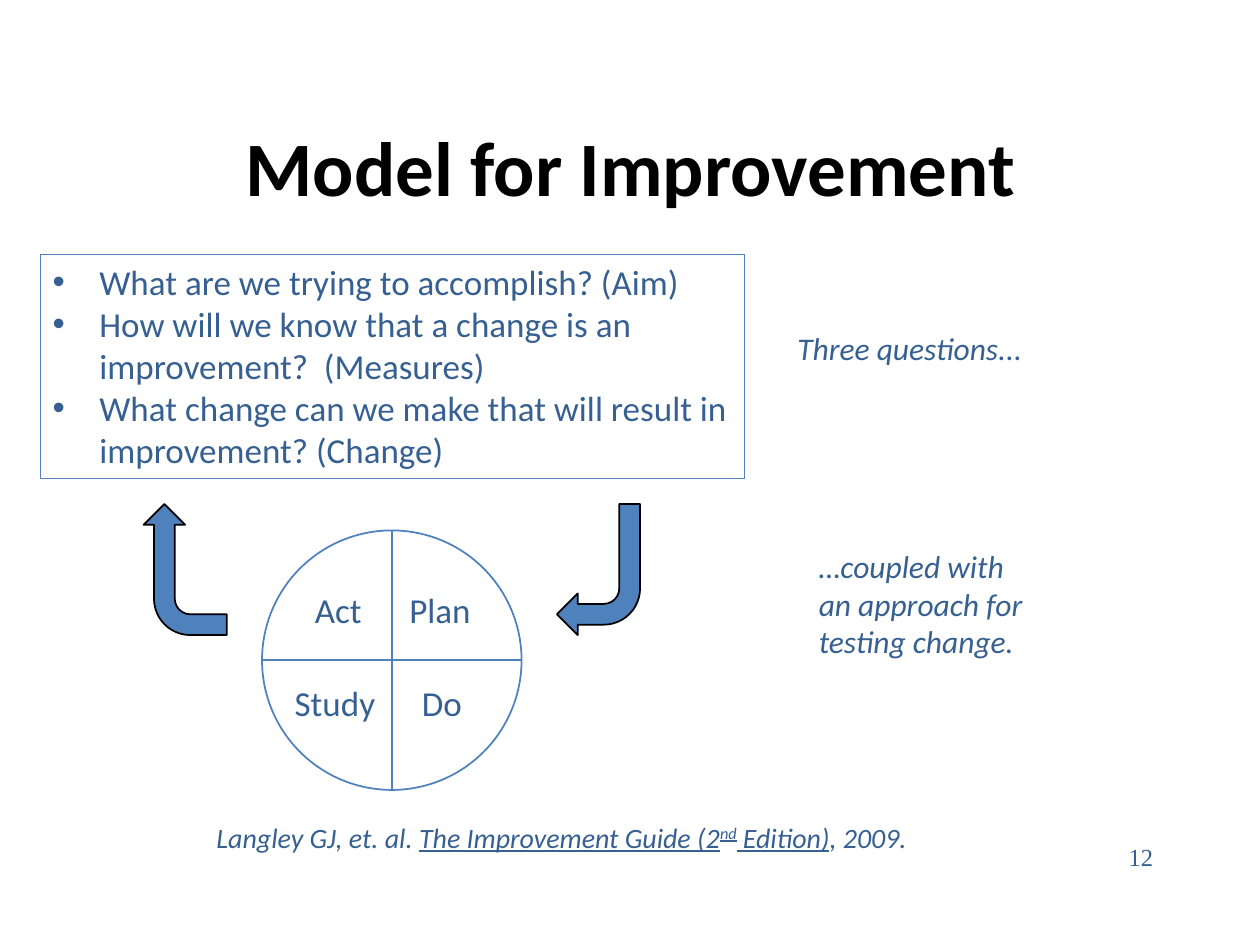
from typing import NamedTuple

from lxml import etree
from pptx import Presentation
from pptx.dml.color import RGBColor
from pptx.enum import shapes, text
from pptx.oxml import ns
from pptx.util import Inches, Pt

BLUE, NAVY, BLACK = "4F81BD", "376092", "000000"
MID_X, MID_Y, RADIUS = 3.11, 5.24, 1.03


class Label(NamedTuple):
    words: str
    left: float
    top: float
    width: float
    height: float
    size: int = 20
    italic: bool = False


LABELS = [
    Label("Three questions...", 6.23, 2.56, 2, 0.4, 18, True),
    Label("…coupled with\nan approach for\ntesting change.", 6.4, 4.29, 1.83, 1.01, 18, True),
    Label("Plan", 3.15, 4.62, 0.69, 0.44),
    Label("Do", 3.25, 5.36, 0.52, 0.44),
    Label("Study", 2.24, 5.36, 0.85, 0.44),
    Label("Act", 2.4, 4.62, 0.58, 0.44),
]
QUESTIONS = [
    "What are we trying to accomplish? (Aim)",
    "How will we know that a change is an improvement?  (Measures)",
    "What change can we make that will result in improvement? (Change)",
]


def paint(hue: str) -> RGBColor:
    return RGBColor.from_string(hue)


def style(para, size: int, hue: str = NAVY, face: str = "Calibri",
          bold: bool = False, italic: bool = False) -> None:
    font = para.font
    font.name, font.size, font.bold, font.italic = face, Pt(size), bold, italic
    font.color.rgb = paint(hue)


def add_text(slide, label: Label, wrap: bool = False):
    box = slide.shapes.add_textbox(*map(Inches, label[1:5]))
    frame = box.text_frame
    frame.word_wrap = wrap
    frame.text = label.words
    for para in frame.paragraphs:
        style(para, label.size, italic=label.italic)
    return frame


def add_shape(slide, kind, box: tuple, line: str = BLUE, width: float = 1,
              fill: str = "", turn: int = 0):
    shape = slide.shapes.add_shape(kind, *map(Inches, box))
    shape.shadow.inherit = False
    shape.rotation = turn
    if fill:
        shape.fill.solid()
        shape.fill.fore_color.rgb = paint(fill)
    else:
        shape.fill.background()
    shape.line.color.rgb = paint(line)
    shape.line.width = Pt(width)
    return shape


def add_line(slide, *ends: float) -> None:
    line = slide.shapes.add_connector(shapes.MSO_CONNECTOR.STRAIGHT, *map(Inches, ends))
    line.line.color.rgb = paint(BLUE)
    line.line.width = Pt(1)
    etree.SubElement(line._element.spPr, ns.qn("a:effectLst"))


def add_bullet(para) -> None:
    props = para._p.get_or_add_pPr()
    props.set("marL", str(Inches(0.37)))
    props.set("indent", str(Inches(-0.37)))
    etree.SubElement(props, ns.qn("a:buFont")).set("typeface", "Arial")
    etree.SubElement(props, ns.qn("a:buChar")).set("char", "•")


def add_list(slide) -> None:
    box = add_shape(slide, shapes.MSO_SHAPE.RECTANGLE, (0.32, 2.02, 5.59, 1.78), width=0.75)
    frame = box.text_frame
    frame.word_wrap = True
    frame.vertical_anchor = text.MSO_ANCHOR.TOP
    frame.text = "\n".join(QUESTIONS)
    for para in frame.paragraphs:
        para.alignment = text.PP_ALIGN.LEFT
        add_bullet(para)
        style(para, 20)


def add_cycle(slide) -> None:
    kinds = shapes.MSO_SHAPE
    left, top = MID_X - RADIUS, MID_Y - RADIUS
    add_line(slide, left, MID_Y, MID_X + RADIUS, MID_Y)
    add_shape(slide, kinds.OVAL, (left, top, 2 * RADIUS, 2 * RADIUS))
    add_line(slide, MID_X, top, MID_X, MID_Y + RADIUS)
    for box, turn in (((4.42, 4, 0.66, 1.04), 180), ((0.95, 4.19, 1.04, 0.66), 270)):
        add_shape(slide, kinds.BENT_ARROW, box, BLACK, fill=BLUE, turn=turn)


def add_source(slide) -> None:
    frame = add_text(slide, Label("", 1.62, 6.46, 5.77, 0.37, 16, True))
    para = frame.paragraphs[0]
    for words, under, raised in (
        ("Langley GJ, et. al. ", False, False),
        ("The Improvement Guide (2", True, False),
        ("nd", True, True),
        (" Edition)", True, False),
        (", 2009.", False, False),
    ):
        run = para.add_run()
        run.text = words
        run.font.underline = under
        if raised:
            run.font._element.set("baseline", "30000")


def main() -> None:
    deck = Presentation()
    deck.slide_width, deck.slide_height = Inches(10), Inches(7.5)
    slide = deck.slides.add_slide(deck.slide_layouts[6])

    title = add_text(slide, Label("Model for Improvement", 0.73, 0.7, 8.55, 1.23), wrap=True)
    title.vertical_anchor = text.MSO_ANCHOR.MIDDLE
    title.paragraphs[0].alignment = text.PP_ALIGN.CENTER
    style(title.paragraphs[0], 44, BLACK, bold=True)

    add_list(slide)
    add_cycle(slide)
    for label in LABELS:
        add_text(slide, label)
    add_source(slide)

    number = add_text(slide, Label("12", 7.17, 6.63, 2.08, 0.5), wrap=True)
    number.paragraphs[0].alignment = text.PP_ALIGN.RIGHT
    style(number.paragraphs[0], 14, face="Times New Roman")
    deck.save("out.pptx")


if __name__ == "__main__":
    main()
